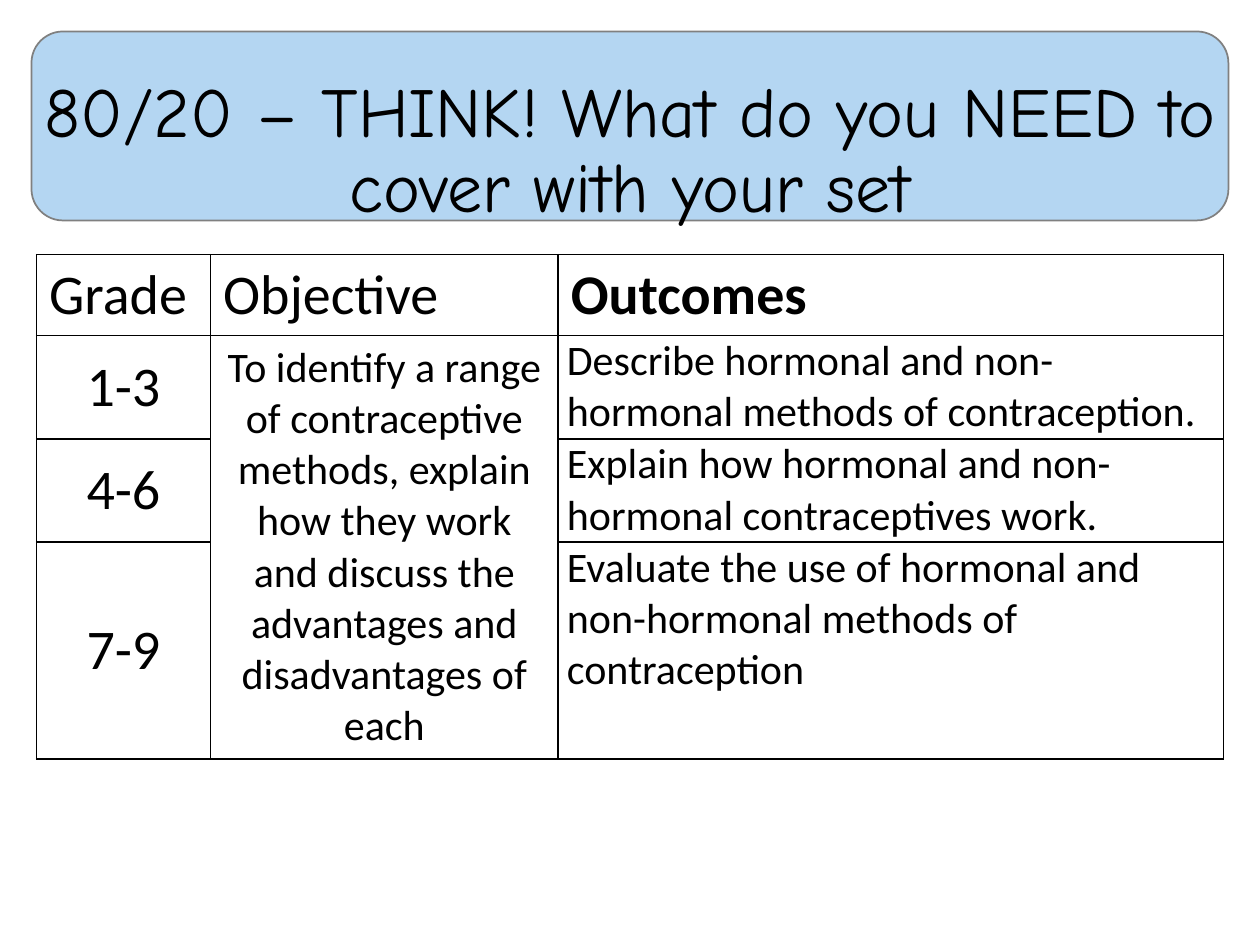
import pptx
import pptx.dml.color
import pptx.enum.shapes
import pptx.enum.text
import pptx.oxml
import pptx.oxml.ns
import pptx.util

WIDE, HIGH = 10, 7.5
COLORS = {"banner": "B4D6F2", "edge": "808080", "ink": "000000", "paper": "FFFFFF"}
COLS = [1.38, 2.76, 5.28]
ROWS = [0.64, 0.82, 0.82, 1.72]
ALIGN = pptx.enum.text.PP_ALIGN
ANCHOR = pptx.enum.text.MSO_ANCHOR
inch = pptx.util.Inches

GOAL = ("To identify a range of contraceptive methods, explain how they work "
        "and discuss the advantages and disadvantages of each")
GRADES = [
    ("1-3", "Describe hormonal and non-hormonal methods of contraception."),
    ("4-6", "Explain how hormonal and non-hormonal contraceptives work."),
    ("7-9", "Evaluate the use of hormonal and non-hormonal methods of contraception"),
]
LOOSE = {"margin_left": inch(0.1), "margin_right": inch(0.1),
         "margin_top": inch(0.05), "margin_bottom": inch(0.05)}
TIGHT = {"margin_left": inch(0.07), "margin_right": inch(0.07),
         "margin_top": 0, "margin_bottom": 0}
MIDDLE = {**LOOSE, "vertical_anchor": ANCHOR.MIDDLE}


def color(name):
    return pptx.dml.color.RGBColor.from_string(COLORS[name])


def apply(item, values):
    for name, value in values.items():
        setattr(item, name, value)


def place(shape, left, top, width, height):
    apply(shape, {"left": inch(left), "top": inch(top),
                  "width": inch(width), "height": inch(height)})


def write(frame, text, size, align=ALIGN.LEFT, font="Calibri", bold=False, space=1):
    para = frame.paragraphs[0]
    apply(para, {"alignment": align, "line_spacing": space})
    run = para.add_run()
    run.text = text
    apply(run.font, {"size": pptx.util.Pt(size), "name": font, "bold": bold})
    run.font.color.rgb = color("ink")


def add_banner(slide):
    kind = pptx.enum.shapes.MSO_SHAPE.ROUNDED_RECTANGLE
    banner = slide.shapes.add_shape(kind, *map(inch, (0.25, 0.25, WIDE * 0.95, HIGH * 0.2)))
    banner.shadow.inherit = False
    banner.fill.solid()
    banner.fill.fore_color.rgb = color("banner")
    banner.line.color.rgb = color("edge")
    banner.line.width = pptx.util.Pt(1)
    slide.shapes.title.element.addprevious(banner.element)


def set_title(slide, text):
    title = slide.shapes.title
    place(title, 0.25, 0.25, WIDE * 0.95, 1.61)
    frame = title.text_frame
    apply(frame, {"vertical_anchor": ANCHOR.BOTTOM, "word_wrap": True,
                  "auto_size": pptx.enum.text.MSO_AUTO_SIZE.NONE})
    write(frame, text, 40, ALIGN.CENTER, "Comic Neue", space=0.9)


def style_cell(cell):
    props = cell._tc.get_or_add_tcPr()
    for side in "LRTB":
        props.append(pptx.oxml.parse_xml(
            f'<a:ln{side} {pptx.oxml.ns.nsdecls("a")} w="12700"><a:solidFill>'
            f'<a:srgbClr val="{COLORS["ink"]}"/></a:solidFill></a:ln{side}>'))
    cell.fill.solid()
    cell.fill.fore_color.rgb = color("paper")


def fill_cell(cell, text, size, margins, **style):
    apply(cell, margins)
    write(cell.text_frame, text, size, **style)


def add_grid(slide):
    frame = slide.shapes.add_table(len(ROWS), len(COLS), inch(0.29), inch(2.02),
                                   inch(sum(COLS)), inch(sum(ROWS)))
    grid = frame.table
    for col, width in zip(grid.columns, COLS):
        col.width = inch(width)
    for row, height in zip(grid.rows, ROWS):
        row.height = inch(height)
    for cell in grid.iter_cells():
        style_cell(cell)
    for col, head in enumerate(["Grade", "Objective", "Outcomes"]):
        fill_cell(grid.cell(0, col), head, 32, LOOSE, bold=head == "Outcomes")
    grid.cell(1, 1).merge(grid.cell(len(GRADES), 1))
    fill_cell(grid.cell(1, 1), GOAL, 24, MIDDLE, align=ALIGN.CENTER)
    for row, (grade, result) in enumerate(GRADES, 1):
        fill_cell(grid.cell(row, 0), grade, 32, MIDDLE, align=ALIGN.CENTER)
        fill_cell(grid.cell(row, 2), result, 24, TIGHT)


def main():
    deck = pptx.Presentation()
    apply(deck, {"slide_width": inch(WIDE), "slide_height": inch(HIGH)})
    slide = deck.slides.add_slide(deck.slide_layouts.get_by_name("Title Only"))
    add_banner(slide)
    set_title(slide, "80/20 – THINK! What do you NEED to cover with your set")
    add_grid(slide)
    deck.save("out.pptx")


if __name__ == "__main__":
    main()
